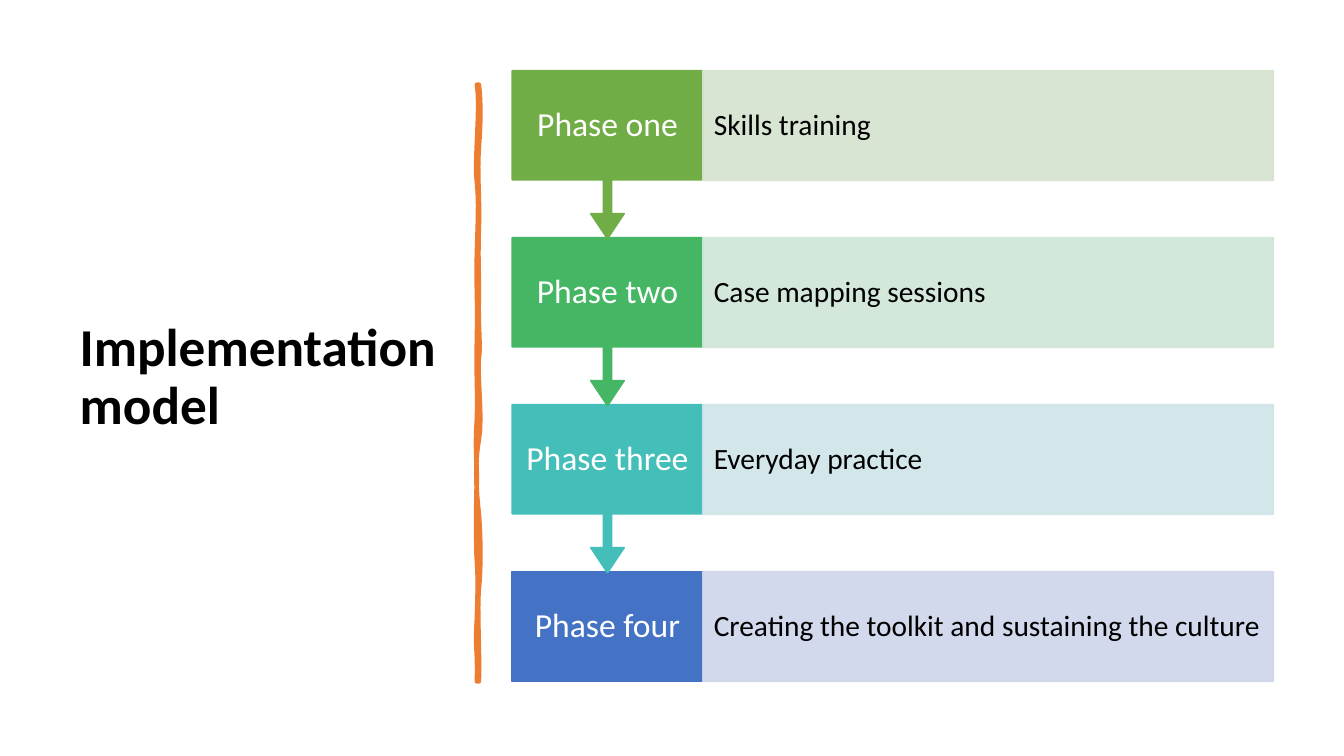
from pptx import Presentation
from pptx.dml.color import RGBColor
from pptx.enum import shapes, text
from pptx.oxml import parse_xml
from pptx.oxml.ns import nsdecls
from pptx.util import Inches, Pt

FONT = "Calibri"
COLORS = {
    "black": "000000", "white": "FFFFFF", "divider": "ED7D31",
    "one": "70AD47", "one_pale": "D5E3CF",
    "two": "45B664", "two_pale": "CFE5D8",
    "three": "43BEB9", "three_pale": "CFE5E8",
    "four": "4472C4", "four_pale": "CFD5EA",
}
PHASES = [
    ("one", "Skills training"),
    ("two", "Case mapping sessions"),
    ("three", "Everyday practice"),
    ("four", "Creating the toolkit and sustaining the culture"),
]
FIRST_TOP, LAST_TOP = 0.7, 5.67
PITCH = (LAST_TOP - FIRST_TOP) / (len(PHASES) - 1)
BOX_LEFT, BOX_WIDTH, BOX_HEIGHT = 5.08, 1.89, 1.09
CALLOUT_HEIGHT = 1.67
CALLOUT_ADJUSTMENTS = (0.05, 0.1, 0.15, 0.65)
DETAIL_LEFT, DETAIL_WIDTH = 6.97, 5.66

LABEL = {"size": 24, "color": "white", "align": text.PP_ALIGN.CENTER,
         "margin_x": 0.13, "margin_y": 0.19}
DETAIL = {"size": 21, "color": "black", "align": text.PP_ALIGN.LEFT,
          "margin_x": 0.11, "margin_y": 0.29}
TITLE = {"size": 38, "color": "black", "align": text.PP_ALIGN.LEFT,
         "margin_x": 0.1, "margin_y": 0.05, "bold": True}

# Each curve: first control x, y, second control x, y, end y
DIVIDER_TOP, DIVIDER_BOTTOM = 0.84, 6.76
DIVIDER_RIGHT, DIVIDER_LEFT = 4.75, 4.73
RIGHT_EDGE = [
    (4.77, 1.02, 4.77, 1.19, 1.46), (4.73, 1.73, 4.76, 1.95, 2.26),
    (4.74, 2.57, 4.75, 2.62, 2.94), (4.74, 3.25, 4.77, 3.42, 3.56),
    (4.73, 3.7, 4.79, 4.14, 4.36), (4.71, 4.57, 4.72, 4.84, 5.1),
    (4.77, 5.36, 4.77, 5.64, 5.84), (4.73, 6.03, 4.76, 6.5, 6.76),
]
LEFT_EDGE = [
    (4.74, 6.46, 4.71, 6.44, 6.13), (4.74, 5.83, 4.74, 5.7, 5.57),
    (4.72, 5.44, 4.72, 4.95, 4.77), (4.73, 4.59, 4.71, 4.45, 4.15),
    (4.74, 3.86, 4.72, 3.73, 3.35), (4.74, 2.98, 4.72, 2.81, 2.5),
    (4.74, 2.18, 4.75, 2.0, 1.81), (4.7, 1.63, 4.77, 1.04, 0.84),
]


def rgb(name):
    return RGBColor.from_string(COLORS[name])


def paint(shape, color, line_width=1, opacity=None):
    shape.shadow.inherit = False
    shape.line.width = Pt(line_width)
    for fill in (shape.fill, shape.line.fill):
        fill.solid()
        fill.fore_color.rgb = rgb(color)
    if opacity is not None:
        for swatch in shape._element.spPr.xpath(".//a:srgbClr"):
            swatch.append(parse_xml(
                f'<a:alpha {nsdecls("a")} val="{opacity * 1000}"/>'))


def write(shape, words, style):
    frame = shape.text_frame
    frame.text = words
    margin_x, margin_y = Inches(style["margin_x"]), Inches(style["margin_y"])
    frame_format = {
        "word_wrap": True, "auto_size": text.MSO_AUTO_SIZE.NONE,
        "vertical_anchor": text.MSO_ANCHOR.MIDDLE,
        "margin_left": margin_x, "margin_right": margin_x,
        "margin_top": margin_y, "margin_bottom": margin_y,
    }
    for name, value in frame_format.items():
        setattr(frame, name, value)
    paragraph = frame.paragraphs[0]
    paragraph.alignment = style["align"]
    paragraph.line_spacing = 0.9
    font = paragraph.runs[0].font
    font_format = {"name": FONT, "size": Pt(style["size"]),
                   "bold": style.get("bold", False)}
    for name, value in font_format.items():
        setattr(font, name, value)
    font.color.rgb = rgb(style["color"])


def add_title(slide):
    title = slide.shapes.title
    place = {"left": 0.69, "top": 0.7, "width": 3.74, "height": 6.11}
    for name, value in place.items():
        setattr(title, name, Inches(value))
    write(title, "Implementation model", TITLE)


def edge_points(x, start_y, curves, steps=8):
    """Sample the cubic curves of one divider edge, which all end on x."""
    points = []
    for x1, y1, x2, y2, end_y in curves:
        for step in range(1, steps + 1):
            t = step / steps
            s = 1 - t
            weights = (s ** 3, 3 * s * s * t, 3 * s * t * t, t ** 3)
            points.append(tuple(
                Inches(sum(w * v for w, v in zip(weights, values)))
                for values in ((x, x1, x2, x), (start_y, y1, y2, end_y))))
        start_y = end_y
    return points


def add_divider(slide):
    builder = slide.shapes.build_freeform(
        Inches(DIVIDER_RIGHT), Inches(DIVIDER_TOP))
    outline = edge_points(DIVIDER_RIGHT, DIVIDER_TOP, RIGHT_EDGE)
    outline.append((Inches(DIVIDER_LEFT), Inches(DIVIDER_BOTTOM)))
    outline += edge_points(DIVIDER_LEFT, DIVIDER_BOTTOM, LEFT_EDGE)
    builder.add_line_segments(outline, close=True)
    divider = builder.convert_to_shape()
    paint(divider, "divider", 3.25)
    divider.line._get_or_add_ln().append(
        parse_xml(f'<a:round {nsdecls("a")}/>'))


def add_phase(slide, index, number, detail_words):
    top = Inches(FIRST_TOP + index * PITCH)
    is_last = index == len(PHASES) - 1
    kind = shapes.MSO_SHAPE
    label = slide.shapes.add_shape(
        kind.RECTANGLE if is_last else kind.DOWN_ARROW_CALLOUT,
        Inches(BOX_LEFT), top, Inches(BOX_WIDTH),
        Inches(BOX_HEIGHT if is_last else CALLOUT_HEIGHT))
    if not is_last:
        for position, value in enumerate(CALLOUT_ADJUSTMENTS):
            label.adjustments[position] = value
    paint(label, number)
    write(label, f"Phase {number}", LABEL)

    detail = slide.shapes.add_shape(
        kind.RECTANGLE, Inches(DETAIL_LEFT), top,
        Inches(DETAIL_WIDTH), Inches(BOX_HEIGHT))
    paint(detail, f"{number}_pale", opacity=90)
    write(detail, detail_words, DETAIL)


def main():
    deck = Presentation()
    deck.slide_width, deck.slide_height = Inches(13.33), Inches(7.5)
    slide = deck.slides.add_slide(deck.slide_layouts[5])
    add_title(slide)
    add_divider(slide)
    # Bottom up, so that each arrow tip lies over the next box
    for index, (number, detail_words) in reversed(list(enumerate(PHASES))):
        add_phase(slide, index, number, detail_words)
    deck.save("out.pptx")


if __name__ == "__main__":
    main()
